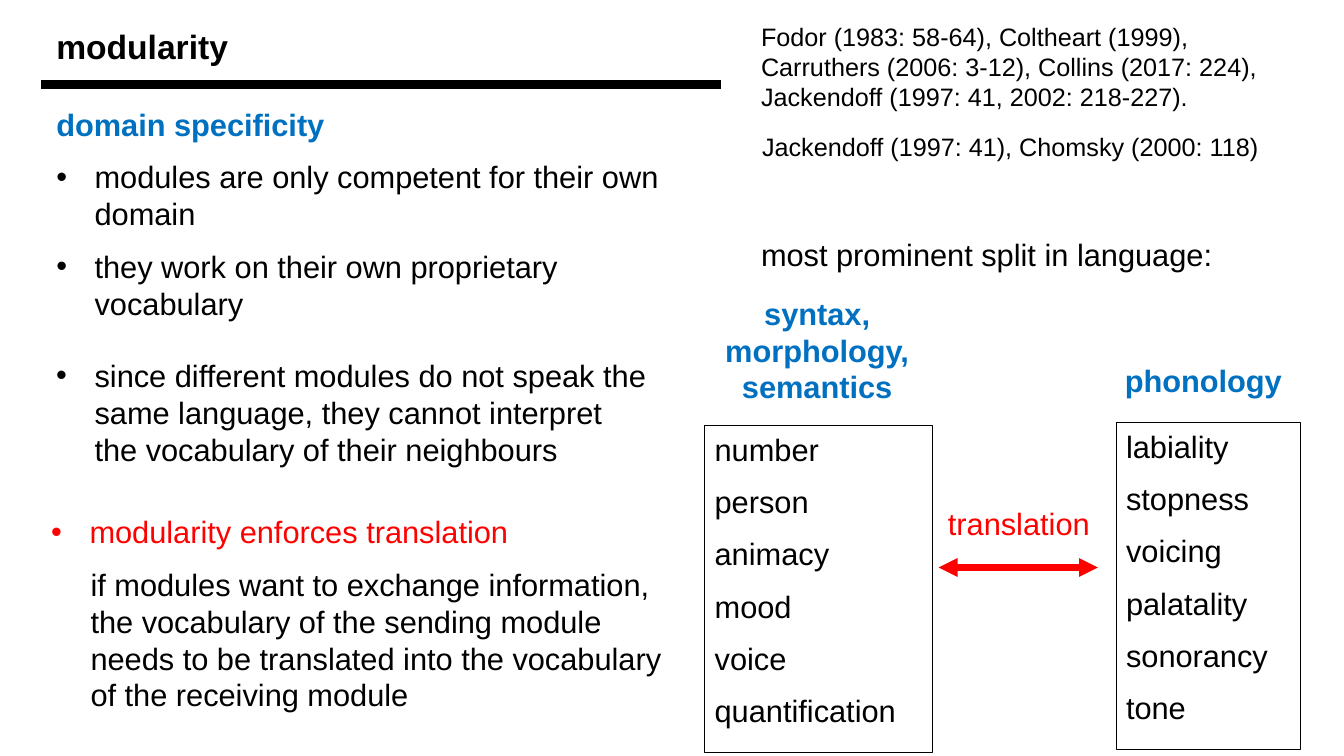
from lxml import etree
from pptx import Presentation
from pptx.dml.color import RGBColor
from pptx.enum.shapes import MSO_CONNECTOR as Connector, MSO_SHAPE as Shape
from pptx.enum.text import MSO_ANCHOR as Anchor, PP_ALIGN as Align
from pptx.oxml.ns import qn
from pptx.util import Inches, Pt

COLORS = {"black": "000000", "blue": "0070C0", "red": "FF0000"}
BULLET_INDENT = 0.38


def rgb(name):
    return RGBColor.from_string(COLORS[name])


def para(text, color="black", bold=False, bullet=False, indent=0):
    return {"text": text, "color": color, "bold": bold, "bullet": bullet, "indent": indent}


class SlideBuilder:
    font = "Arial"
    body_size = 22

    def __init__(self, slide):
        self.shapes = slide.shapes

    def fill_frame(self, frame, paragraphs, size, align):
        """Each paragraph after the first is set off by half a line."""
        frame.word_wrap = True
        frame.vertical_anchor = Anchor.TOP
        for i, item in enumerate(paragraphs):
            paragraph = frame.add_paragraph() if i else frame.paragraphs[0]
            paragraph.alignment = align
            if i:
                paragraph.space_before = Pt(size / 2)
            self.indent(paragraph, item)
            run = paragraph.add_run()
            run.text = item["text"]
            run.font.name = self.font
            run.font.size = Pt(size)
            run.font.bold = item["bold"]
            run.font.color.rgb = rgb(item["color"])

    def indent(self, paragraph, item):
        props = paragraph._p.get_or_add_pPr()
        if item["bullet"]:
            props.set("marL", str(Inches(BULLET_INDENT)))
            props.set("indent", str(-Inches(BULLET_INDENT)))
            etree.SubElement(props, qn("a:buFont"), typeface=self.font)
            etree.SubElement(props, qn("a:buChar"), char="•")
        elif item["indent"]:
            props.set("marL", str(Inches(item["indent"])))
            props.set("indent", "0")

    def text(self, box, *paragraphs, size=body_size, align=Align.LEFT):
        label = self.shapes.add_textbox(*map(Inches, box))
        self.fill_frame(label.text_frame, paragraphs, size, align)

    def feature_list(self, box, words):
        """Outlined box with one word per paragraph."""
        frame = self.shapes.add_shape(Shape.RECTANGLE, *map(Inches, box))
        frame.shadow.inherit = False
        frame.fill.background()
        frame.line.color.rgb = rgb("black")
        frame.line.width = Pt(0.75)
        self.fill_frame(
            frame.text_frame, [para(word) for word in words], self.body_size, Align.LEFT)

    def rule(self, left, right, y, color, width, arrows=False):
        line = self.shapes.add_connector(
            Connector.STRAIGHT, Inches(left), Inches(y), Inches(right), Inches(y))
        line.line.color.rgb = rgb(color)
        line.line.width = Pt(width)
        if arrows:
            outline = line._element.spPr.find(qn("a:ln"))
            for end in ("a:headEnd", "a:tailEnd"):
                etree.SubElement(outline, qn(end), type="triangle")
        etree.SubElement(line._element.spPr, qn("a:effectLst"))


def main():
    deck = Presentation()
    deck.slide_width, deck.slide_height = Inches(13.33), Inches(7.5)
    page = SlideBuilder(deck.slides.add_slide(deck.slide_layouts[6]))

    page.text((0.46, 0.21, 8.35, 0.5), para("modularity", bold=True), size=24)
    page.rule(0.41, 7.15, 0.84, "black", 6)
    page.text(
        (0.46, 1, 6.35, 2.32),
        para("domain specificity", "blue", bold=True),
        para("modules are only competent for their own domain", bullet=True),
        para("they work on their own proprietary vocabulary", bullet=True))

    page.feature_list(
        (6.99, 4.22, 2.26, 3.25),
        ["number", "person", "animacy", "mood", "voice", "quantification"])
    page.text((6.94, 2.87, 2.33, 1.21),
              para("syntax, morphology, semantics", "blue", bold=True), align=Align.CENTER)
    page.feature_list(
        (11.07, 4.19, 1.83, 3.25),
        ["labiality", "stopness", "voicing", "palatality", "sonorancy", "tone"])
    page.text((10.84, 3.54, 2.19, 0.47),
              para("phonology", "blue", bold=True), align=Align.CENTER)

    page.text((7.45, 2.29, 5.5, 0.47), para("most prominent split in language:"))
    page.text(
        (7.45, 0.16, 5.6, 1.01),
        para("Fodor (1983: 58-64), Coltheart (1999), Carruthers (2006: 3-12), "
             "Collins (2017: 224), Jackendoff (1997: 41, 2002: 218-227)."),
        size=18)

    page.text(
        (0.46, 3.49, 6.1, 1.21),
        para("since different modules do not speak the same language, they cannot "
             "interpret the vocabulary of their neighbours", bullet=True))
    page.text(
        (0.41, 5.04, 6.4, 2.14),
        para("modularity enforces translation", "red", bullet=True),
        para("if modules want to exchange information, the vocabulary of the sending "
             "module needs to be translated into the vocabulary of the receiving module",
             indent=0.39))

    page.text((9.23, 4.96, 1.75, 0.47), para("translation", "red"), align=Align.CENTER)
    page.rule(9.31, 10.89, 5.63, "red", 4.5, arrows=True)
    page.text((7.46, 1.25, 5.6, 0.4),
              para("Jackendoff (1997: 41), Chomsky (2000: 118)"), size=18)

    deck.save("out.pptx")


if __name__ == "__main__":
    main()
